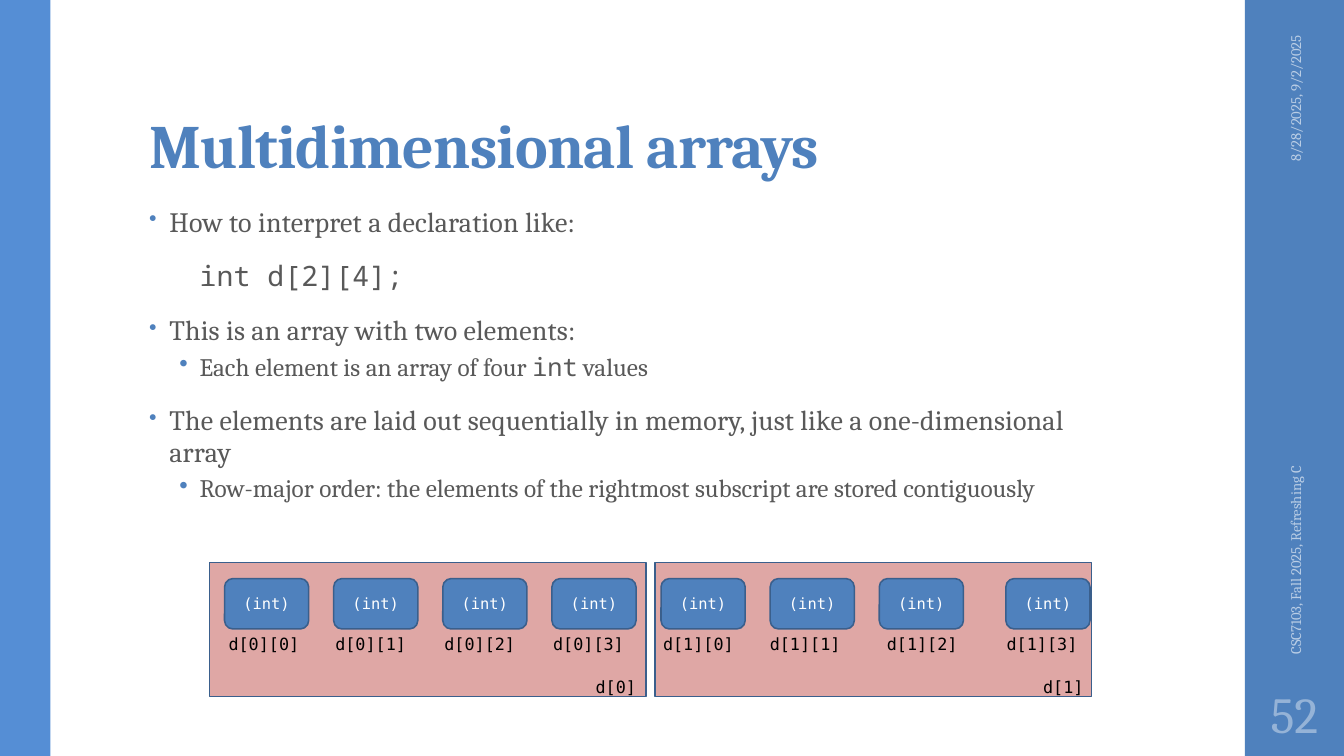
from lxml.etree import SubElement
from pptx import Presentation
from pptx.dml.color import RGBColor
from pptx.enum.shapes import MSO_SHAPE
from pptx.enum.text import MSO_ANCHOR, PP_ALIGN
from pptx.oxml.ns import qn
from pptx.util import Cm, Pt

COLOURS = {
    "blue": "4F81BD",
    "light_band": "558ED5",
    "red": "C0504D",
    "outline": "3A5F8C",
    "body": "595959",
    "white": "FFFFFF",
    "black": "000000",
    "footer": "B9CDE5",
    "number": "95B3D7",
}
SERIF = "Cambria"
CODE = "Noto Sans Mono"
MONO = "DejaVu Sans Mono"

ROW_LEFTS = (5.28, 16.51)
ROW_LABEL_LEFTS = (14.76, 26.04)
COLUMNS = 4
CELL_PITCH = 2.75
CELL_LEFTS = [5.66 + CELL_PITCH * i for i in range(7)] + [25.35]
CELL_LABEL_LEFTS = (5.51, 8.2, 10.95, 13.69, 16.46, 19.15, 22.1, 25.12)


def colour(name):
    return RGBColor.from_string(COLOURS[name])


def add_text(paragraph, text, font=SERIF, size=20, fill="body", bold=False, spacing=0):
    run = paragraph.add_run()
    run.text = text
    run.font.name = font
    run.font.size = Pt(size)
    run.font.bold = bold
    run.font.color.rgb = colour(fill)
    if spacing:
        run.font._element.set("spc", str(spacing))


def add_box(slide, kind, left, top, width, height, fill, outlined=True, alpha=None):
    box = slide.shapes.add_shape(kind, Cm(left), Cm(top), Cm(width), Cm(height))
    box.shadow.inherit = False
    box.fill.solid()
    box.fill.fore_color.rgb = colour(fill)
    if alpha:
        fill_colour = box._element.spPr.find(qn("a:solidFill"))[0]
        SubElement(fill_colour, qn("a:alpha"), val=str(alpha * 1000))
    if outlined:
        box.line.color.rgb = colour("outline")
        box.line.width = Pt(1.1)
    else:
        box.line.fill.background()
    return box


def add_frame(slide, left, top, width, height, wrap=True, anchor=MSO_ANCHOR.TOP,
              align=PP_ALIGN.LEFT, rotation=0):
    label = slide.shapes.add_textbox(Cm(left), Cm(top), Cm(width), Cm(height))
    label.rotation = rotation
    frame = label.text_frame
    frame.word_wrap = wrap
    frame.vertical_anchor = anchor
    frame.paragraphs[0].alignment = align
    return frame


def add_code_label(slide, text, left, top, width):
    frame = add_frame(slide, left, top, width, 0.76, wrap=False)
    add_text(frame.paragraphs[0], text, font=MONO, size=12, fill="black")


def add_bullet(paragraph, indent, percent):
    properties = paragraph._p.get_or_add_pPr()
    properties.set("marL", str(Cm(indent)))
    properties.set("indent", str(-Cm(0.51)))
    bullet_colour = SubElement(properties, qn("a:buClr"))
    SubElement(bullet_colour, qn("a:srgbClr"), val=COLOURS["blue"])
    SubElement(properties, qn("a:buSzPct"), val=str(percent * 1000))
    SubElement(properties, qn("a:buChar"), char="•")


def add_point(paragraph, pieces, level=0, bulleted=True):
    paragraph.level = level
    paragraph.line_spacing = 0.9 if level else 0.95
    paragraph.space_before = Pt(3 if level else 14)
    paragraph.space_after = Pt(3 if level else 2)
    if bulleted:
        add_bullet(paragraph, 1.27 if level else 0.51, 100 if level else 80)
    for text, font in pieces:
        add_text(paragraph, text, font=font, size=18 if level else 20,
                 spacing=0 if level else 10)


def add_bands(slide):
    add_box(slide, MSO_SHAPE.RECTANGLE, 31.37, 0, 2.5, 19.05, "blue", outlined=False)
    add_box(slide, MSO_SHAPE.RECTANGLE, 0, 0, 1.27, 19.05, "light_band", outlined=False)


def add_title(slide):
    frame = add_frame(slide, 3.51, 0.81, 26.92, 3.89, anchor=MSO_ANCHOR.BOTTOM)
    frame.margin_top = Cm(0.08)
    frame.paragraphs[0].line_spacing = 0.9
    add_text(frame.paragraphs[0], "Multidimensional arrays", size=44, fill="blue",
             bold=True, spacing=-50)


def add_body(slide):
    points = [
        ([("How to interpret a declaration like:", SERIF)], 0, True),
        ([("\tint d[2][4];", CODE)], 0, False),
        ([("This is an array with two elements:", SERIF)], 0, True),
        ([("Each element is an array of four ", SERIF), ("int", CODE),
          (" values", SERIF)], 1, True),
        ([("The elements are laid out sequentially in memory, "
           "just like a one-dimensional array", SERIF)], 0, True),
        ([("Row-major order: the elements of the rightmost subscript "
           "are stored contiguously", SERIF)], 1, True),
    ]
    frame = add_frame(slide, 3.51, 5.08, 23.88, 12.09)
    for i, (pieces, level, bulleted) in enumerate(points):
        paragraph = frame.add_paragraph() if i else frame.paragraphs[0]
        add_point(paragraph, pieces, level, bulleted)


def add_memory_diagram(slide):
    for left in ROW_LEFTS:
        add_box(slide, MSO_SHAPE.RECTANGLE, left, 14.17, 11, 3.38, "red", alpha=50)
    for i, (left, label_left) in enumerate(zip(CELL_LEFTS, CELL_LABEL_LEFTS)):
        cell = add_box(slide, MSO_SHAPE.ROUNDED_RECTANGLE, left, 14.58, 2.12, 1.27, "blue")
        cell.text_frame.vertical_anchor = MSO_ANCHOR.MIDDLE
        value = cell.text_frame.paragraphs[0]
        value.alignment = PP_ALIGN.CENTER
        add_text(value, "(int)", font=MONO, size=11, fill="white")
        row, column = divmod(i, COLUMNS)
        add_code_label(slide, f"d[{row}][{column}]", label_left, 15.85, 2.31)
    for row, left in enumerate(ROW_LABEL_LEFTS):
        add_code_label(slide, f"d[{row}]", left, 16.92, 1.55)


def add_footer(slide):
    dates = add_frame(slide, 30, 2.77, 5.28, 1.02, anchor=MSO_ANCHOR.MIDDLE,
                      align=PP_ALIGN.RIGHT, rotation=270)
    add_text(dates.paragraphs[0], "8/28/2025, 9/2/2025", size=10.5, fill="footer")
    course = add_frame(slide, 27.66, 11.25, 9.96, 1.02, anchor=MSO_ANCHOR.MIDDLE,
                       rotation=270)
    add_text(course.paragraphs[0], "CSC7103, Fall 2025, Refreshing C", size=10.5,
             fill="footer")
    number = add_frame(slide, 31.37, 17.15, 2.5, 1.65, anchor=MSO_ANCHOR.MIDDLE,
                       align=PP_ALIGN.CENTER)
    number.margin_left = number.margin_right = Cm(0.13)
    add_text(number.paragraphs[0], "52", size=36, fill="number")


def main():
    presentation = Presentation()
    presentation.slide_width = Cm(33.87)
    presentation.slide_height = Cm(19.05)
    slide = presentation.slides.add_slide(presentation.slide_layouts[6])
    add_bands(slide)
    add_title(slide)
    add_body(slide)
    add_memory_diagram(slide)
    add_footer(slide)
    presentation.save("out.pptx")


if __name__ == "__main__":
    main()
